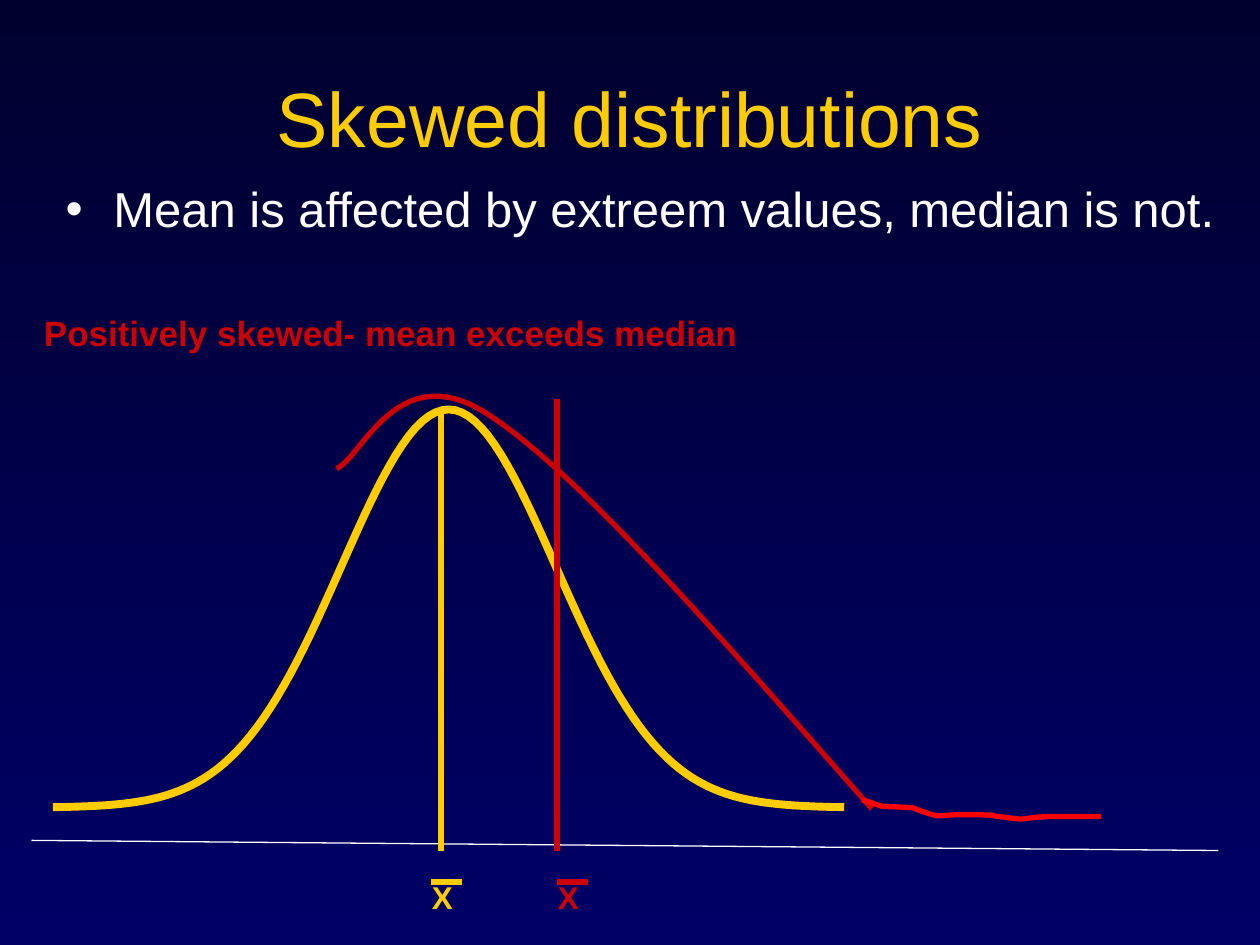
import math
from dataclasses import dataclass

import lxml.etree
import pptx
import pptx.dml.color
import pptx.enum.text
import pptx.oxml.ns
import pptx.util

Inches, Pt = pptx.util.Inches, pptx.util.Pt
RGBColor = pptx.dml.color.RGBColor
Align, Anchor = pptx.enum.text.PP_ALIGN, pptx.enum.text.MSO_ANCHOR
Point = tuple[float, float]


@dataclass(frozen=True)
class Theme:
    font: str = "Arial"
    bg_top: str = "00002F"
    bg_bottom: str = "000066"
    gold: str = "FFCC00"
    red: str = "CC0000"
    tail_red: str = "FF0000"
    white: str = "FFFFFF"
    title: float = 44
    body: float = 28
    caption: float = 20
    symbol: float = 18
    thin: float = 0.75
    medium: float = 3
    thick: float = 4.5


THEME = Theme()


@dataclass(frozen=True)
class Line:
    start: Point
    end: Point
    color: str
    width: float


@dataclass(frozen=True)
class Label:
    text: str
    box: tuple[float, float, float, float]
    size: float
    color: str


@dataclass(frozen=True)
class Curve:
    points: list[Point]
    color: str
    width: float


def bell(left: float, right: float, steps: int = 120) -> list[Point]:
    """Points of the normal curve resting on its baseline."""
    center, sigma, base, height = 3.56, 0.85, 6.41, 3.16
    xs = [left + (right - left) * i / steps for i in range(steps + 1)]
    return [(x, base - height * math.exp(-((x - center) / sigma) ** 2 / 2)) for x in xs]


def bezier(start: Point, *segments: tuple[Point, Point, Point], steps: int = 30) -> list[Point]:
    """Points along joined cubic segments, each given as two controls and an end."""
    points = [start]
    for c1, c2, end in segments:
        p0 = points[-1]
        for t in (i / steps for i in range(1, steps + 1)):
            weights = ((1 - t) ** 3, 3 * t * (1 - t) ** 2, 3 * t * t * (1 - t), t ** 3)
            points.append(tuple(sum(w * p[axis] for w, p in zip(weights, (p0, c1, c2, end)))
                                for axis in (0, 1)))
    return points


def style_line(line, color: str, width: float) -> None:
    line.color.rgb = RGBColor.from_string(color)
    line.width = Pt(width)


def add_line(slide, spec: Line) -> None:
    cx = slide.shapes.add_connector(1, *map(Inches, spec.start + spec.end))
    style_line(cx.line, spec.color, spec.width)
    lxml.etree.SubElement(cx._element.spPr, pptx.oxml.ns.qn("a:effectLst"))


def add_curve(slide, spec: Curve) -> None:
    points = [(Inches(x), Inches(y)) for x, y in spec.points]
    fb = slide.shapes.build_freeform(*points[0])
    fb.add_line_segments(points[1:], close=False)
    sp = fb.convert_to_shape()
    sp.fill.background()
    sp.shadow.inherit = False
    style_line(sp.line, spec.color, spec.width)


def write(sp, label: Label, bold: bool = False):
    """Place the shape, write the label in it and return its paragraph."""
    for name, value in zip(("left", "top", "width", "height"), label.box):
        setattr(sp, name, Inches(value))
    tf = sp.text_frame
    tf.word_wrap = True
    tf.auto_size = pptx.enum.text.MSO_AUTO_SIZE.NONE
    p = tf.paragraphs[0]
    r = p.add_run()
    r.text = label.text
    font_format = {"name": THEME.font, "size": Pt(label.size), "bold": bold}
    for name, value in font_format.items():
        setattr(r.font, name, value)
    r.font.color.rgb = RGBColor.from_string(label.color)
    return p


def add_label(slide, label: Label) -> None:
    write(slide.shapes.add_textbox(0, 0, 0, 0), label, bold=True)


def add_mean(slide, x: float, top: float, symbol_left: float, color: str) -> None:
    """A vertical line at the mean, with an X-bar under the axis."""
    add_line(slide, Line((x, top), (x, 6.75), color, THEME.medium))
    add_label(slide, Label("X", (symbol_left, 6.92, 0.33, 0.4), THEME.symbol, color))
    bar = symbol_left + 0.09
    add_line(slide, Line((bar, 7), (bar + 0.25, 7), color, THEME.medium))


def set_background(slide) -> None:
    fill = slide.background.fill
    fill.gradient()
    fill.gradient_angle = 270
    for stop, color in zip(fill.gradient_stops, (THEME.bg_top, THEME.bg_bottom)):
        stop.color.rgb = RGBColor.from_string(color)


def add_heading(slide) -> None:
    title, body = slide.shapes.title, slide.placeholders[1]
    p = write(title, Label("Skewed distributions", (0.5, 0.3, 9, 1.25), THEME.title, THEME.gold))
    p.alignment = Align.CENTER
    title.text_frame.vertical_anchor = Anchor.MIDDLE

    p = write(body, Label("Mean is affected by extreem values, median is not.",
                          (0.42, 1.42, 9.58, 0.58), THEME.body, THEME.white))
    p.line_spacing = 0.9
    pPr = p._p.get_or_add_pPr()
    for name, value in {"marL": 0.38, "indent": -0.38}.items():
        pPr.set(name, str(Inches(value)))
    lxml.etree.SubElement(pPr, pptx.oxml.ns.qn("a:buChar")).set("char", "•")


def main() -> None:
    prs = pptx.Presentation()
    prs.slide_width, prs.slide_height = Inches(10), Inches(7.5)
    slide = prs.slides.add_slide(prs.slide_layouts[1])
    set_background(slide)
    add_heading(slide)
    add_label(slide, Label("Positively skewed- mean exceeds median",
                           (0.25, 2.42, 7.08, 0.43), THEME.caption, THEME.red))

    skewed = bezier((6.92, 6.42),
                    ((5.74, 5.08), (4.57, 3.73), (3.86, 3.28)),
                    ((3.15, 2.83), (2.87, 3.64), (2.67, 3.72)))
    tail = bezier((6.84, 6.35), ((6.89, 6.36), (6.94, 6.38), (7, 6.4)))
    tail += bezier((7.24, 6.41),
                   ((7.27, 6.42), (7.29, 6.43), (7.32, 6.44)),
                   ((7.53, 6.51), (7.35, 6.45), (7.88, 6.47)),
                   ((7.9, 6.48), (7.91, 6.48), (7.93, 6.48)),
                   ((8.2, 6.52), (8.06, 6.49), (8.34, 6.48)),
                   ((8.47, 6.48), (8.6, 6.48), (8.74, 6.48)))

    add_curve(slide, Curve(skewed, THEME.red, THEME.medium))
    add_curve(slide, Curve(bell(0.42, 6.7), THEME.gold, THEME.thick))
    add_line(slide, Line((0.25, 6.67), (9.67, 6.75), THEME.white, THEME.thin))
    add_mean(slide, 3.5, 3.25, 3.33, THEME.gold)
    add_mean(slide, 4.42, 3.17, 4.33, THEME.red)
    add_curve(slide, Curve(tail, THEME.tail_red, THEME.medium))
    prs.save("out.pptx")


if __name__ == "__main__":
    main()
